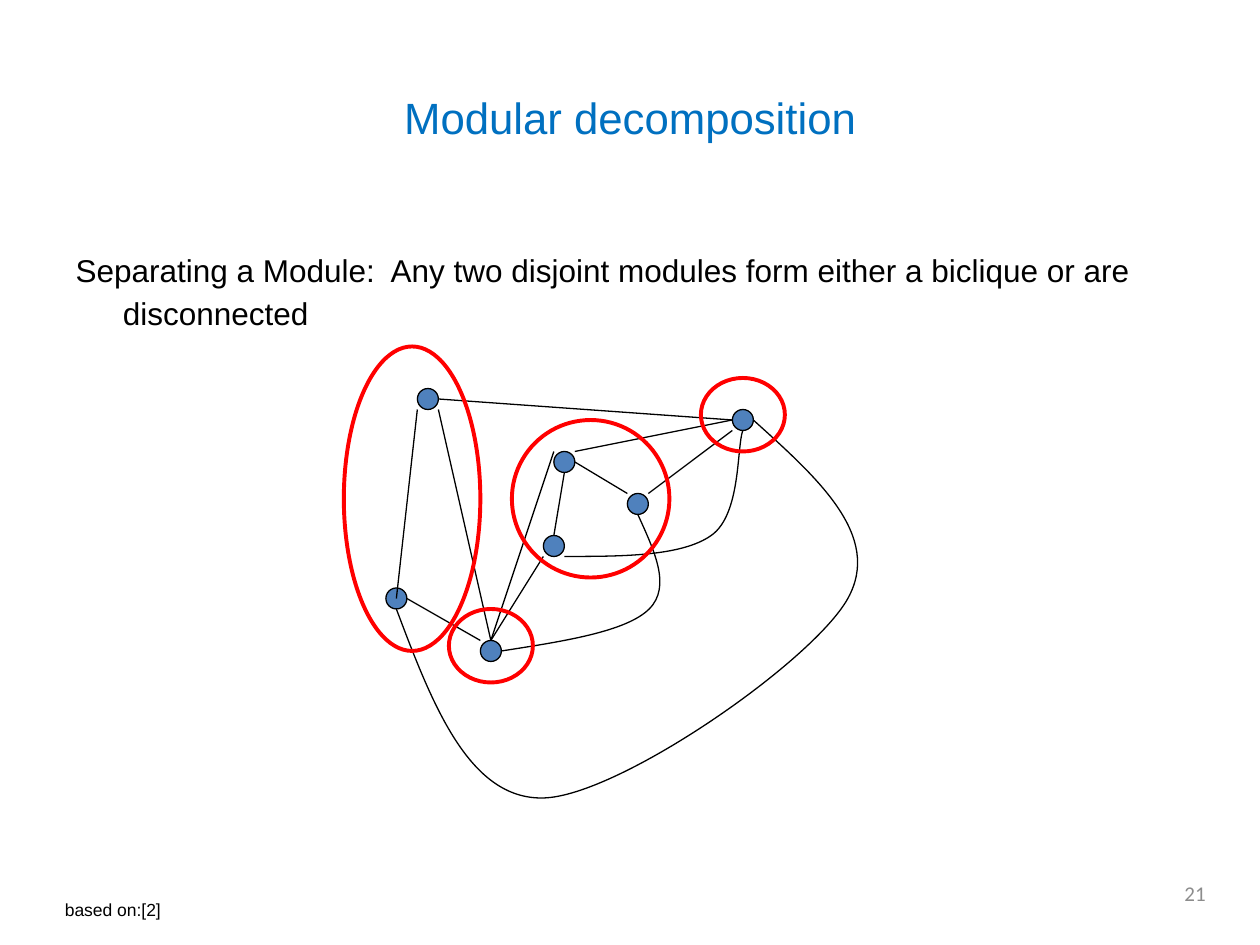
from typing import NamedTuple, Optional

from lxml.etree import SubElement
from pptx import Presentation
from pptx.dml.color import RGBColor
from pptx.enum.shapes import MSO_CONNECTOR, MSO_SHAPE
from pptx.enum.text import MSO_ANCHOR, MSO_AUTO_SIZE, PP_ALIGN
from pptx.oxml.ns import qn
from pptx.util import Pt

BLACK, RED, BLUE, TITLE_BLUE, GREY = "000000", "FF0000", "4F81BD", "0070C0", "8C8C8C"
RADIUS = 6


class Point(NamedTuple):
    x: float
    y: float


class Edge(NamedTuple):
    """A straight line; each offset counts node radii from the node centre."""
    start: str
    start_offset: Point
    end: str
    end_offset: Point


class Box(NamedTuple):
    left: float
    top: float
    width: float
    height: float


NODES = {
    "bottom": Point(280.5, 372),
    "upper": Point(322.5, 264),
    "left": Point(226.5, 342),
    "right": Point(424.5, 240),
    "lower": Point(316.5, 312),
    "middle": Point(364.5, 288),
    "top": Point(244.5, 228),
}
EDGES = [
    Edge("lower", Point(0, -1), "upper", Point(0, 1)),
    Edge("upper", Point(1, 0), "middle", Point(-1, -1)),
    Edge("middle", Point(1, -1), "right", Point(-1, 1)),
    Edge("upper", Point(1, -1), "right", Point(-1, 0)),
    Edge("lower", Point(-1, 1), "bottom", Point(0, -1)),
    Edge("upper", Point(-1, -1), "bottom", Point(0, -1)),
    Edge("left", Point(1, 0), "bottom", Point(-1, -1)),
    Edge("left", Point(0, 0), "top", Point(-1, 1)),
    Edge("bottom", Point(0, -1), "top", Point(1, 1)),
    Edge("top", Point(1, 0), "right", Point(-1, 0)),
]
# Each curve: a start, then two control points and an end per Bezier segment
CURVES = [
    [(322.5, 318), (355.5, 318), (389.5, 318), (406.5, 306),
     (423.5, 294), (421, 256), (424.5, 246)],
    [(364.5, 294), (373.5, 314), (384, 335), (371, 348),
     (358, 361), (322, 366.5), (286.5, 372)],
    [(430.5, 240), (467, 273), (504.5, 306), (484.5, 342),
     (464.5, 378), (353.5, 455), (310.5, 456),
     (268, 457), (247, 402.5), (226.5, 348)],
]
MODULES = [
    Box(292.5, 240, 90, 90),
    Box(196.5, 198, 78, 174),
    Box(256.5, 348, 48, 42),
    Box(400.5, 216, 48, 42),
]


def colour(value: str) -> RGBColor:
    return RGBColor.from_string(value)


def apply(target, values: dict) -> None:
    for name, value in values.items():
        setattr(target, name, value)


def place(shape, box: Box) -> None:
    apply(shape, {name: Pt(value) for name, value in box._asdict().items()})


def add_span(para, text: str, size: float, value: str, font: str = "Arial") -> None:
    span = para.add_run()
    span.text = text
    apply(span.font, {"name": font, "size": Pt(size)})
    span.font.color.rgb = colour(value)


def set_line(shape, value: str, width: float) -> None:
    shape.line.color.rgb = colour(value)
    shape.line.width = Pt(width)


def add_ellipse(page, box: Box, fill: Optional[str], line: str, width: float) -> None:
    shape = page.shapes.add_shape(MSO_SHAPE.OVAL, *map(Pt, box))
    shape.shadow.inherit = False
    if fill:
        shape.fill.solid()
        shape.fill.fore_color.rgb = colour(fill)
    else:
        shape.fill.background()
    set_line(shape, line, width)


def edge_end(node: str, offset: Point) -> Point:
    centre = NODES[node]
    return Point(centre.x + RADIUS * offset.x, centre.y + RADIUS * offset.y)


def add_edge(page, edge: Edge) -> None:
    start = edge_end(edge.start, edge.start_offset)
    end = edge_end(edge.end, edge.end_offset)
    line = page.shapes.add_connector(MSO_CONNECTOR.STRAIGHT, *map(Pt, start + end))
    set_line(line, BLACK, 0.75)
    SubElement(line.element.spPr, qn("a:effectLst"))


def add_curve(page, points: list) -> None:
    start, *rest = [(Pt(x), Pt(y)) for x, y in points]
    builder = page.shapes.build_freeform(*start)
    builder.add_line_segments(rest, close=False)
    shape = builder.convert_to_shape()
    shape.shadow.inherit = False
    shape.fill.background()
    set_line(shape, BLACK, 0.75)
    # Turn every three straight segments into one cubic Bezier
    outline = next(shape.element.iter(qn("a:path")))
    for index, segment in enumerate(outline.findall(qn("a:lnTo"))):
        if index % 3 == 0:
            bezier = SubElement(outline, qn("a:cubicBezTo"))
        bezier.append(segment[0])
        outline.remove(segment)


def add_label(page, box: Box, text: str, size: float, value: str, font: str,
              align: PP_ALIGN, frame_format: dict) -> None:
    label = page.shapes.add_textbox(*map(Pt, box))
    apply(label.text_frame, {"word_wrap": True, **frame_format})
    para = label.text_frame.paragraphs[0]
    para.alignment = align
    add_span(para, text, size, value, font)


def main() -> None:
    deck = Presentation()
    apply(deck, {"slide_width": Pt(720), "slide_height": Pt(540)})
    page = deck.slides.add_slide(deck.slide_layouts[1])

    # Title
    title = page.shapes.title
    place(title, Box(36, 21.6, 648, 90))
    apply(title.text_frame, {"vertical_anchor": MSO_ANCHOR.MIDDLE,
                             "auto_size": MSO_AUTO_SIZE.NONE})
    para = title.text_frame.paragraphs[0]
    para.alignment = PP_ALIGN.CENTER
    add_span(para, "Modular decomposition", 25, TITLE_BLUE)

    # Statement, unbulleted with a hanging indent
    body = page.placeholders[1]
    place(body, Box(36, 126, 648, 356.4))
    body.text_frame.auto_size = MSO_AUTO_SIZE.NONE
    para = body.text_frame.paragraphs[0]
    settings = para._p.get_or_add_pPr()
    settings.set("marL", str(Pt(27)))
    settings.set("indent", str(Pt(-27)))
    SubElement(settings, qn("a:buNone"))
    add_span(para, "Separating a Module:", 18, BLACK)
    add_span(para, " ", 32, BLACK)
    add_span(para, "Any two disjoint modules form either a biclique or are "
                   "disconnected", 18, BLACK)

    # Graph
    for x, y in NODES.values():
        box = Box(x - RADIUS, y - RADIUS, 2 * RADIUS, 2 * RADIUS)
        add_ellipse(page, box, BLUE, BLACK, 0.75)
    for edge in EDGES:
        add_edge(page, edge)
    for points in CURVES:
        add_curve(page, points)
    for box in MODULES:
        add_ellipse(page, box, None, RED, 2.25)

    # Page number and citation
    add_label(page, Box(528, 496, 168, 28.8), "21", 12, GREY, "Calibri",
              PP_ALIGN.RIGHT, {"vertical_anchor": MSO_ANCHOR.MIDDLE})
    add_label(page, Box(30, 510, 132.5, 19.4), "based on:[2]", 10, BLACK, "Arial",
              PP_ALIGN.LEFT, {"auto_size": MSO_AUTO_SIZE.SHAPE_TO_FIT_TEXT})

    deck.save("out.pptx")


if __name__ == "__main__":
    main()
